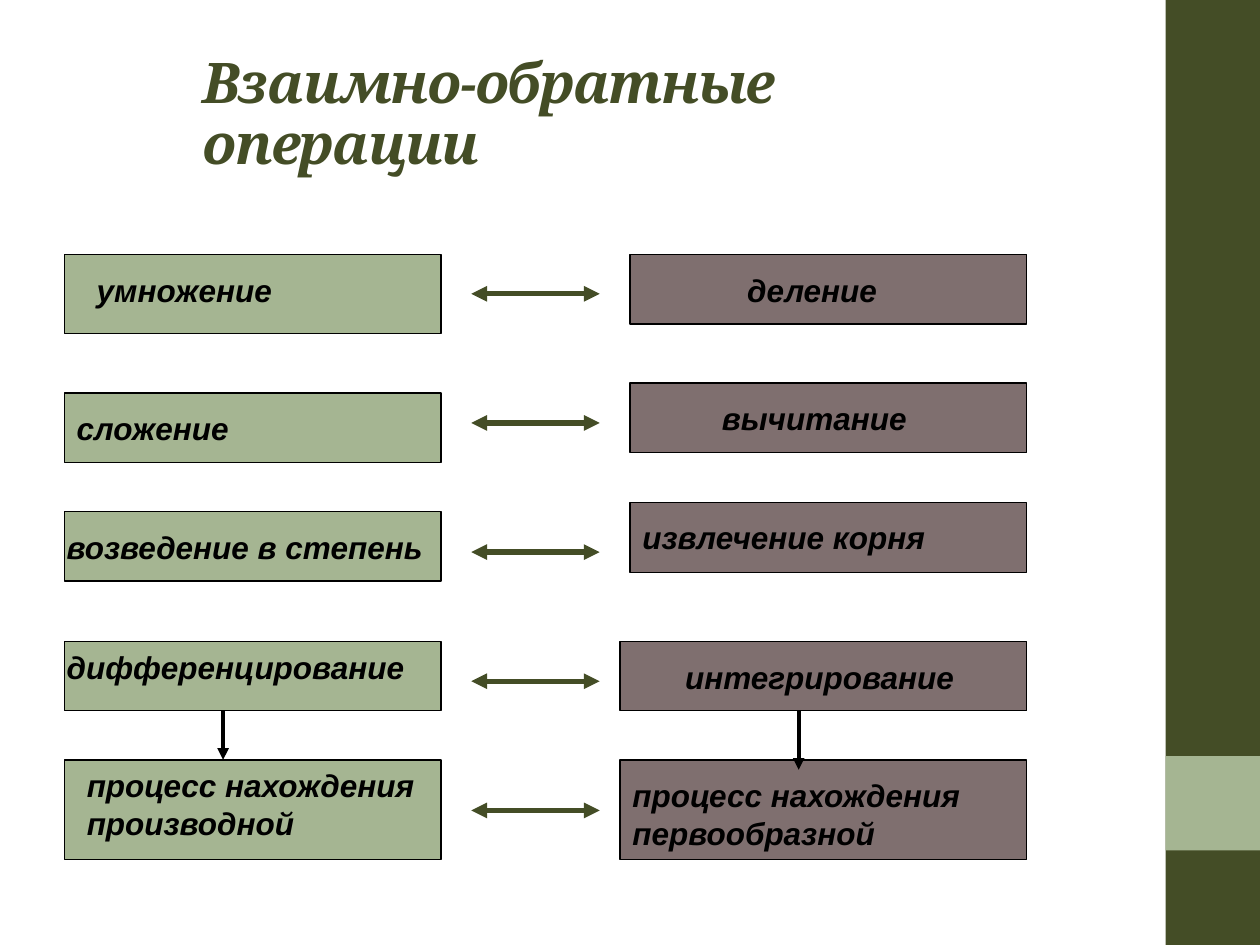
"""Build the slide that pairs mathematical operations with their inverses."""
import pptx
import pptx.dml.color
import pptx.enum.shapes
import pptx.enum.text
import pptx.oxml.ns
import pptx.util
from lxml import etree

Pt = pptx.util.Pt
RGBColor = pptx.dml.color.RGBColor

OLIVE = RGBColor(0x44, 0x4D, 0x26)
SAGE = RGBColor(0xA5, 0xB5, 0x92)
MAUVE = RGBColor(0x7F, 0x6F, 0x6F)
BLACK = RGBColor(0, 0, 0)

LEFT_X, LEFT_WIDTH = 36.75, 215.25
RIGHT_EDGE = 586.8
INSET = 7.2

LEFT_BOXES = [(145.4, 45.4), (224.6, 39.7), (292.3, 39.7), (366.5, 39.7), (434.2, 56.9)]
RIGHT_BOXES = [
    (360, 145.4, 39.7),
    (360, 218.9, 39.7),
    (360, 287.3, 39.7),
    (354.3, 366.5, 39.7),
    (354.3, 434.2, 56.9),
]
LABELS = [
    ("умножение", 48.2, 151.2, 181.4, 0),
    ("деление", 360, 151.2, 152, 59.8),
    ("сложение", 36.75, 230.4, 215.3, 0),
    ("вычитание", 405.4, 224.6, 153.4, 0),
    ("возведение в степень", 31, 298.1, 232.6, 0),
    ("извлечение корня", 360, 292.3, 244, 0),
    ("дифференцирование", 31, 366.5, 221, 0),
    ("интегрирование", 354.3, 372.2, 238.3, 30),
    ("процесс нахождения производной", 42.5, 434.2, 209.5, 0),
    ("процесс нахождения первообразной", 354.3, 439.9, 226.8, 0),
]
FIRST_ARROW_Y, ARROW_STEP = 167.9, 73.8


def format_span(span, size, font, color):
    """Apply the bold italic style that all wording shares."""
    span.font.size = Pt(size)
    span.font.name = font
    span.font.bold = True
    span.font.italic = True
    span.font.color.rgb = color


def add_title(page):
    """Place and format the title placeholder."""
    title = page.shapes.title
    title.left, title.top, title.width, title.height = Pt(108.7), Pt(38.2), Pt(491), Pt(56.2)
    frame = title.text_frame
    frame.text = "Взаимно-обратные операции"
    frame.word_wrap = True
    frame.auto_size = pptx.enum.text.MSO_AUTO_SIZE.NONE
    frame.vertical_anchor = pptx.enum.text.MSO_ANCHOR.MIDDLE
    para = frame.paragraphs[0]
    para.alignment = pptx.enum.text.PP_ALIGN.LEFT
    para.line_spacing = 0.9
    span = para.runs[0]
    format_span(span, 32, "Cambria", OLIVE)
    span._r.get_or_add_rPr().set("spc", "-100")


def add_box(page, left, top, width, height, fill, outlined=True):
    """Add a filled rectangle with an optional thin black outline."""
    box = page.shapes.add_shape(
        pptx.enum.shapes.MSO_SHAPE.RECTANGLE, Pt(left), Pt(top), Pt(width), Pt(height)
    )
    box.shadow.inherit = False
    box.fill.solid()
    box.fill.fore_color.rgb = fill
    if outlined:
        box.line.color.rgb = BLACK
        box.line.width = Pt(0.75)
    else:
        box.line.fill.background()


def add_label(page, text, left, top, width, indent):
    """Add an operation name, shifted right by the indent."""
    label = page.shapes.add_textbox(Pt(left), Pt(top), Pt(width), Pt(29))
    frame = label.text_frame
    frame.text = text
    frame.word_wrap = True
    frame.auto_size = pptx.enum.text.MSO_AUTO_SIZE.SHAPE_TO_FIT_TEXT
    frame.margin_left = Pt(INSET + indent)
    format_span(frame.paragraphs[0].runs[0], 18, "Arial", BLACK)


def add_arrow(page, start, end, color, weight, ends):
    """Add a straight arrow with triangles at the named ends."""
    arrow = page.shapes.add_connector(
        pptx.enum.shapes.MSO_CONNECTOR.STRAIGHT, *(Pt(value) for value in start + end)
    )
    arrow.line.color.rgb = color
    arrow.line.width = Pt(weight)
    outline = arrow.line._get_or_add_ln()
    for name in ends:
        etree.SubElement(outline, pptx.oxml.ns.qn(f"a:{name}"), type="triangle")
    etree.SubElement(arrow._element.spPr, pptx.oxml.ns.qn("a:effectLst"))


def main():
    """Assemble and save the slide."""
    deck = pptx.Presentation()
    deck.slide_width, deck.slide_height = Pt(720), Pt(540)
    page = deck.slides.add_slide(deck.slide_layouts[5])
    add_box(page, 666, 0, 54, 540, OLIVE, outlined=False)
    add_box(page, 666, 432, 54, 54, SAGE, outlined=False)
    add_title(page)
    for top, height in LEFT_BOXES:
        add_box(page, LEFT_X, top, LEFT_WIDTH, height, SAGE)
    for left, top, height in RIGHT_BOXES:
        add_box(page, left, top, RIGHT_EDGE - left, height, MAUVE)
    for label in LABELS:
        add_label(page, *label)
    for row in range(len(LEFT_BOXES)):
        y = FIRST_ARROW_Y + row * ARROW_STEP
        add_arrow(page, (269.3, y), (342.7, y), OLIVE, 3, ("headEnd", "tailEnd"))
    for x, bottom in ((127.5, 434.2), (456.4, 439.9)):
        add_arrow(page, (x, 406.2), (x, bottom), BLACK, 2.25, ("tailEnd",))
    deck.save("out.pptx")


if __name__ == "__main__":
    main()
